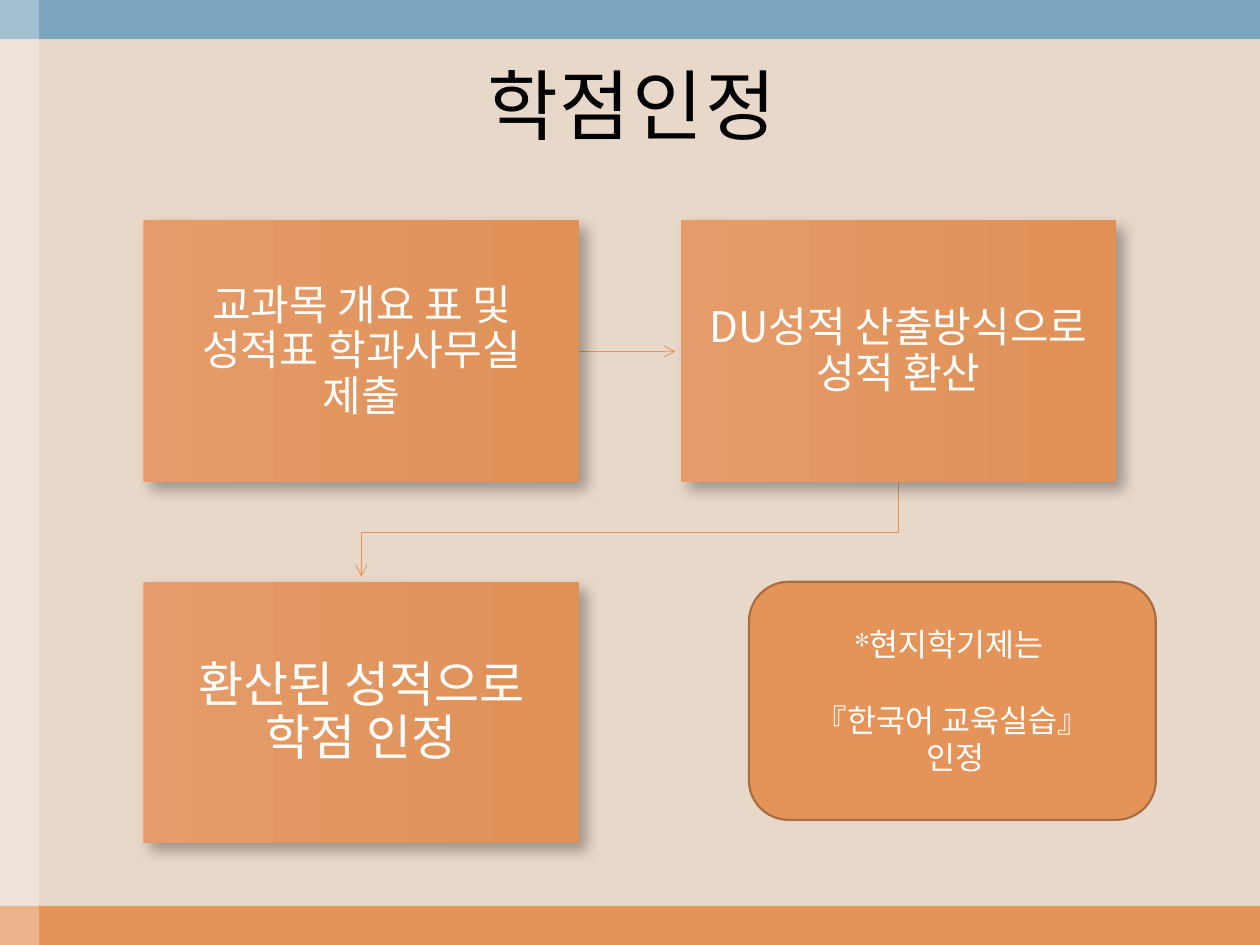
import pptx
import pptx.dml.color
import pptx.enum.shapes
import pptx.enum.text
import pptx.oxml
import pptx.oxml.ns
import pptx.util

Pt = pptx.util.Pt
SHAPES = pptx.enum.shapes.MSO_SHAPE
NAMESPACE = pptx.oxml.ns.nsdecls("a")
HANGUL_FONT = "Noto Sans CJK KR"
LATIN_FONT = "TeX Gyre Schola"
ORANGE = "E49458"


def color(value):
    return pptx.dml.color.RGBColor.from_string(value)


def write_paragraph(paragraph, text, size, text_color, latin_font=HANGUL_FONT):
    paragraph.text = text
    paragraph.alignment = pptx.enum.text.PP_ALIGN.CENTER
    paragraph.font.size = Pt(size)
    paragraph.font.color.rgb = color(text_color)
    paragraph.font.name = latin_font
    paragraph._p.pPr.defRPr.append(
        pptx.oxml.parse_xml(f'<a:ea {NAMESPACE} typeface="{HANGUL_FONT}"/>'))


presentation = pptx.Presentation()
presentation.slide_width, presentation.slide_height = Pt(720), Pt(540)
slide = presentation.slides.add_slide(presentation.slide_layouts[6])
slide.background.fill.solid()
slide.background.fill.fore_color.rgb = color("E8D8CA")

# Edge bands; the left one is translucent and lies over the others
band = 22.4
for left, top, width, height, fill in [
    (0, 540 - band, 720, band, ORANGE),
    (0, 0, 720, band, "7BA5BE"),
    (0, 0, band, 540, "FFFFFF"),
]:
    shape = slide.shapes.add_shape(SHAPES.RECTANGLE, Pt(left), Pt(top), Pt(width), Pt(height))
    shape.shadow.inherit = False
    shape.fill.solid()
    shape.fill.fore_color.rgb = color(fill)
    shape.line.fill.background()
    if fill == "FFFFFF":
        shape.fill._xPr.find(".//" + pptx.oxml.ns.qn("a:srgbClr")).append(
            pptx.oxml.parse_xml(f'<a:alpha {NAMESPACE} val="30000"/>'))

# Title
title = slide.shapes.add_textbox(Pt(24), Pt(22), Pt(674), Pt(74))
title.text_frame.word_wrap = True
title.text_frame.vertical_anchor = pptx.enum.text.MSO_ANCHOR.MIDDLE
paragraph = title.text_frame.paragraphs[0]
write_paragraph(paragraph, "학점인정", 44, "000000", LATIN_FONT)
paragraph._p.pPr.defRPr.set("spc", "100")

# Arrows between the steps
step_width, step_height = 249, 149.5
left_column, right_column = 82, 389
top_row, bottom_row = 126, 332.5
middle_y = top_row + step_height / 2
step_bottom = top_row + step_height
straight_arrow = slide.shapes.add_connector(
    pptx.enum.shapes.MSO_CONNECTOR.STRAIGHT,
    Pt(left_column + step_width), Pt(middle_y), Pt(right_column - 3), Pt(middle_y))
straight_arrow._element.spPr.append(pptx.oxml.parse_xml(f"<a:effectLst {NAMESPACE}/>"))

start_x = right_column + step_width / 2
end_x = left_column + step_width / 2
turn_y = (step_bottom + bottom_row) / 2
builder = slide.shapes.build_freeform(Pt(start_x), Pt(step_bottom))
builder.add_line_segments(
    [(Pt(start_x), Pt(turn_y)), (Pt(end_x), Pt(turn_y)), (Pt(end_x), Pt(bottom_row - 3))],
    close=False)
bent_arrow = builder.convert_to_shape()
bent_arrow.shadow.inherit = False
bent_arrow.fill.background()

for arrow in (straight_arrow, bent_arrow):
    arrow.line.color.rgb = color(ORANGE)
    arrow.line.width = Pt(0.5)
    arrow.line._get_or_add_ln().append(
        pptx.oxml.parse_xml(f'<a:tailEnd {NAMESPACE} type="arrow"/>'))

# Steps
for left, top, text, size, inset in [
    (left_column, top_row, "교과목 개요 표 및 성적표 학과사무실 제출", 24, 14),
    (right_column, top_row, "DU성적 산출방식으로 성적 환산", 24, 14),
    (left_column, bottom_row, "환산된 성적으로 학점 인정", 28, 16),
]:
    step = slide.shapes.add_shape(
        SHAPES.RECTANGLE, Pt(left), Pt(top), Pt(step_width), Pt(step_height))
    step.fill.gradient()
    step.fill.gradient_angle = 0
    for stop, stop_color in zip(step.fill.gradient_stops, ("E59C6A", "DF9156")):
        stop.color.rgb = color(stop_color)
    step.line.fill.background()
    step.shadow.inherit = False
    step._element.spPr.find(pptx.oxml.ns.qn("a:effectLst")).append(pptx.oxml.parse_xml(
        f'<a:outerShdw {NAMESPACE} blurRad="{Pt(8)}" dist="{Pt(6)}" dir="2700000" '
        'algn="tl" rotWithShape="0"><a:srgbClr val="000000"><a:alpha val="31000"/>'
        "</a:srgbClr></a:outerShdw>"))
    frame = step.text_frame
    frame.word_wrap = True
    frame.vertical_anchor = pptx.enum.text.MSO_ANCHOR.MIDDLE
    frame.margin_left = frame.margin_right = Pt(inset)
    frame.margin_top = frame.margin_bottom = Pt(inset)
    write_paragraph(frame.paragraphs[0], text, size, "FFFFFF")
    frame.paragraphs[0].line_spacing = Pt(round(size * 1.08))

# Note
note = slide.shapes.add_shape(
    SHAPES.ROUNDED_RECTANGLE, Pt(428), Pt(332.5), Pt(232.5), Pt(136))
note.shadow.inherit = False
note.fill.solid()
note.fill.fore_color.rgb = color(ORANGE)
note.line.color.rgb = color("A96D41")
note.line.width = Pt(1.25)
frame = note.text_frame
frame.word_wrap = True
frame.vertical_anchor = pptx.enum.text.MSO_ANCHOR.MIDDLE
note_line = 21.5
for index, text in enumerate(["*", "『한국어 교육실습』", " 인정"]):
    paragraph = frame.paragraphs[0] if index == 0 else frame.add_paragraph()
    write_paragraph(paragraph, text, 18, "FFFFFF")
    paragraph.line_spacing = Pt(note_line)
frame.paragraphs[0].runs[0].font.name = LATIN_FONT
frame.paragraphs[0].add_run().text = "현지학기제는 "
frame.paragraphs[1].space_before = Pt(note_line)

presentation.save("out.pptx")
